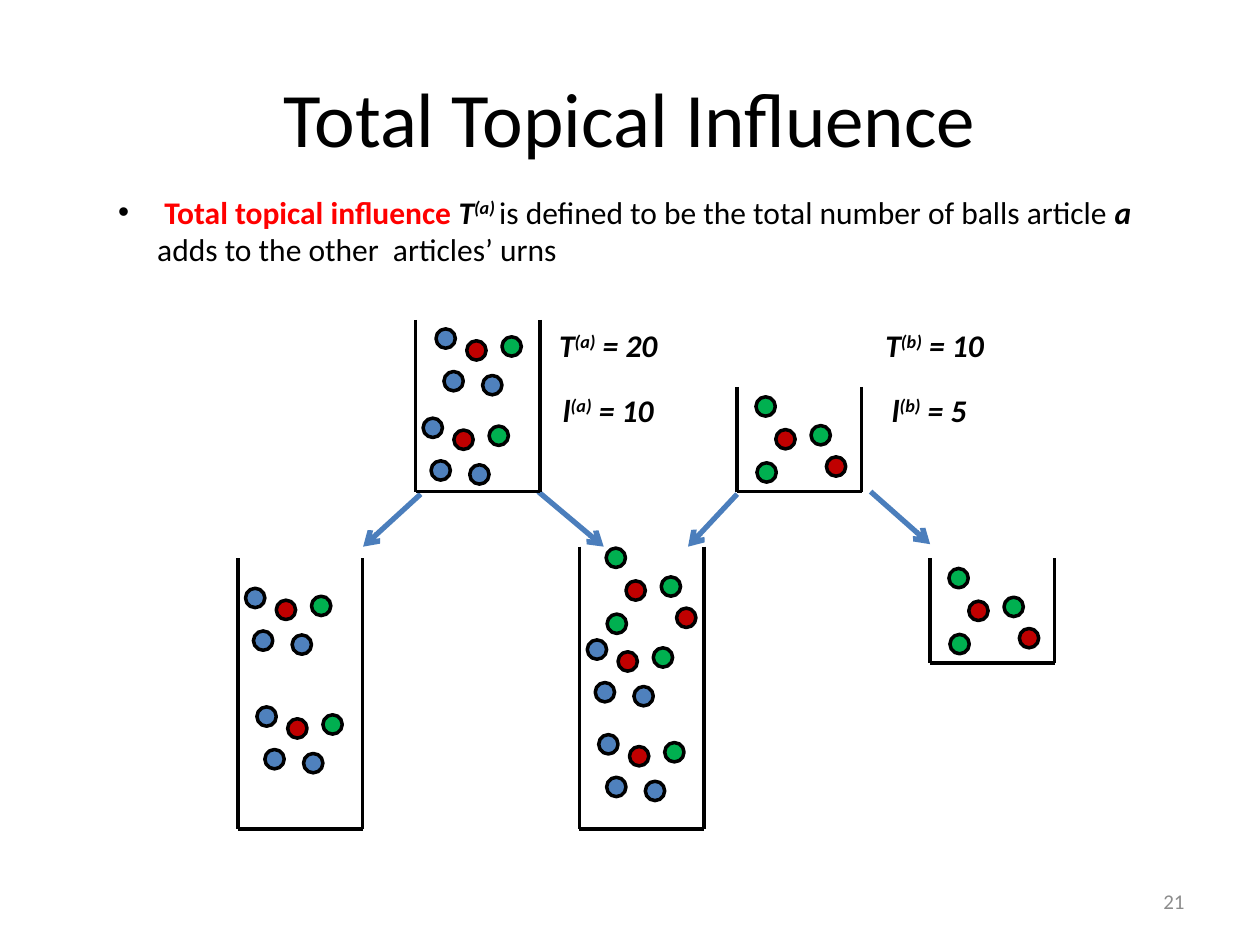
from lxml.etree import SubElement
from pptx import Presentation
from pptx.dml.color import RGBColor
from pptx.enum.shapes import MSO_CONNECTOR, MSO_SHAPE
from pptx.enum.text import MSO_ANCHOR as Anchor, PP_ALIGN as Align
from pptx.oxml.ns import qn
from pptx.util import Cm, Pt

BLACK = RGBColor(0x00, 0x00, 0x00)
EMPHASIS = RGBColor(0xFF, 0x00, 0x00)
GREY = RGBColor(0x8C, 0x8C, 0x8C)
ARROW = RGBColor(0x4B, 0x7E, 0xBC)
BLUE = RGBColor(0x4F, 0x81, 0xBD)
GREEN = RGBColor(0x00, 0xB0, 0x50)
RED = RGBColor(0xC0, 0x00, 0x00)

prs = Presentation()
prs.slide_width, prs.slide_height = Cm(25.4), Cm(19.05)
slide = prs.slides.add_slide(prs.slide_layouts[6])
shapes = slide.shapes


def add_text(runs, left, top, width, height, size=18, color=BLACK,
             align=Align.LEFT, anchor=Anchor.TOP, bullet=False):
    """Add one paragraph; each run is (text, style), with style letters
    b = bold, i = italic, s = superscript, e = emphasis colour."""
    box = shapes.add_textbox(Cm(left), Cm(top), Cm(width), Cm(height))
    frame = box.text_frame
    frame.word_wrap = True
    frame.vertical_anchor = anchor
    paragraph = frame.paragraphs[0]
    paragraph.alignment = align
    if bullet:
        props = paragraph._p.get_or_add_pPr()
        props.set("marL", str(Cm(0.79)))
        props.set("indent", str(-Cm(0.79)))
        SubElement(props, qn("a:buFont"), typeface="Arial")
        SubElement(props, qn("a:buChar"), char="•")
    for text, style in runs:
        run = paragraph.add_run()
        run.text = text
        font = run.font
        font.name, font.size = "Calibri", Pt(size)
        font.bold, font.italic = "b" in style, "i" in style
        font.color.rgb = EMPHASIS if "e" in style else color
        if "s" in style:
            run._r.get_or_add_rPr().set("baseline", "30000")


def add_line(x1, y1, x2, y2, color=BLACK, weight=2, arrow=False):
    """Draw a line; an arrowhead, if any, sits at its first point."""
    line = shapes.add_connector(MSO_CONNECTOR.STRAIGHT, Cm(x1), Cm(y1), Cm(x2), Cm(y2))
    line.line.color.rgb = color
    line.line.width = Pt(weight)
    if arrow:
        SubElement(line.line._get_or_add_ln(), qn("a:headEnd"), type="arrow")
    SubElement(line._element.spPr, qn("a:effectLst"))


add_text([("Total Topical Influence", "")], 1.27, 0.76, 22.86, 3.18, size=44,
         align=Align.CENTER, anchor=Anchor.MIDDLE)
add_text([("21", "")], 18.2, 17.66, 5.93, 1.01, size=12, color=GREY,
         align=Align.RIGHT, anchor=Anchor.MIDDLE)
add_text([(" ", ""), ("Total topical influence ", "be"), ("T", "bi"), ("(a) ", "bis"),
          ("is defined to be the total number of balls article ", ""), ("a", "bi"),
          (" adds to the other  articles’ urns", "")],
         2.13, 3.76, 21.59, 1.8, bullet=True)

# Influence arrows: cited urn to citing urn, head first
for head_x, head_y, tail_x, tail_y in [
    (7.32, 11.02, 8.48, 9.96),
    (12.17, 11.02, 10.85, 9.91),
    (13.87, 11.02, 14.86, 9.96),
    (18.75, 10.97, 17.55, 9.91),
]:
    add_line(head_x, head_y, tail_x, tail_y, color=ARROW, weight=3, arrow=True)

# Urns: left, top, bottom
URN_WIDTH = 2.51
for left, top, bottom in [
    (8.38, 6.45, 9.91),
    (14.86, 7.8, 9.91),
    (4.8, 11.25, 16.71),
    (18.75, 11.25, 13.36),
    (11.68, 11.02, 16.71),
]:
    right = left + URN_WIDTH
    add_line(left, top, left, bottom)
    add_line(left, bottom, right, bottom)
    add_line(right, top, right, bottom)

# Each article adds the same set of five balls wherever it has influence
BALL = 0.39
balls_a = [(0, 0, BLUE), (0.94, 0.94, BLUE), (0.16, 0.86, BLUE),
           (1.33, 0.16, GREEN), (0.62, 0.24, RED)]
balls_b = [(1.42, 1.21, RED), (1.11, 0.58, GREEN), (0.4, 0.66, RED),
           (0.02, 1.33, GREEN), (0, 0, GREEN)]
places_a = [(8.53, 8.43), (8.79, 6.63), (4.95, 11.86), (5.18, 14.25),
            (11.84, 12.9), (12.07, 14.81)]
places_b = [(15.24, 8), (19.13, 11.46), (12.22, 11.05)]
for balls, places in [(balls_a, places_a), (balls_b, places_b)]:
    for left, top in places:
        for dx, dy, color in balls:
            ball = shapes.add_shape(MSO_SHAPE.OVAL, Cm(left + dx), Cm(top + dy),
                                    Cm(BALL), Cm(BALL))
            ball.shadow.inherit = False
            ball.fill.solid()
            ball.fill.fore_color.rgb = color
            ball.line.color.rgb = BLACK
            ball.line.width = Pt(2)

for symbol, article, value, left, top, width in [
    ("T", "a", 20, 11.02, 6.45, 2.74),
    ("T", "b", 10, 17.6, 6.45, 2.69),
    ("l", "a", 10, 11.1, 7.75, 3.28),
    ("l", "b", 5, 17.73, 7.75, 2.92),
]:
    add_text([(symbol, "bi"), (f"({article})", "bis"), (f" = {value}", "bi")],
             left, top, width, 1.02)

prs.save("out.pptx")
